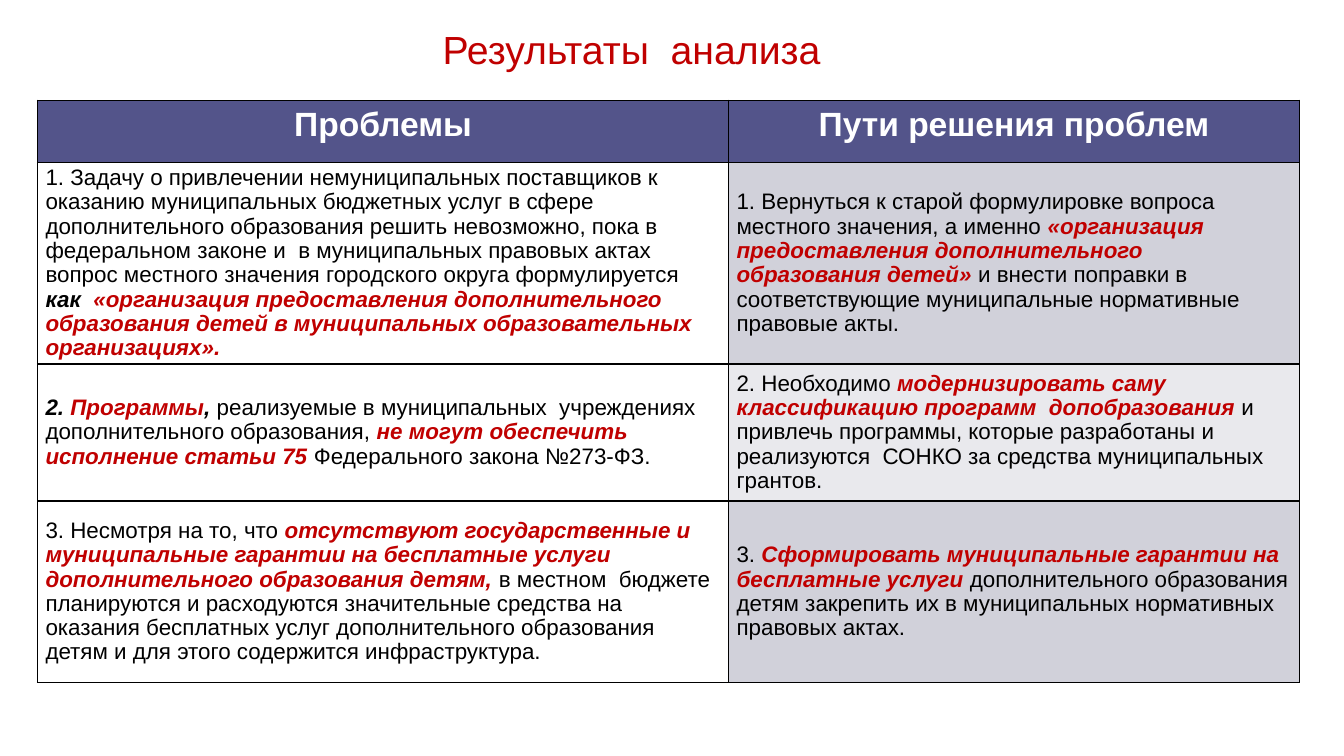
import dataclasses

import lxml.etree
import pptx
import pptx.dml.color
import pptx.enum.text
import pptx.oxml.ns
import pptx.util

Cm = pptx.util.Cm
Pt = pptx.util.Pt
Align = pptx.enum.text.PP_ALIGN
Anchor = pptx.enum.text.MSO_ANCHOR


@dataclasses.dataclass(frozen=True)
class Theme:
    font: str = "Arial"
    title_size: int = 21
    header_size: int = 18
    body_size: int = 12
    line_spacing: int = 13
    border_width: int = 1
    text: str = "000000"
    accent: str = "C00000"
    header_text: str = "FFFFFF"
    header_fill: str = "53548A"
    dark_band: str = "D1D1DA"
    light_band: str = "E9E9ED"


THEME = Theme()

HEADERS = ("Проблемы", "Пути решения проблем")

PLAIN, STRONG, ACCENT = "plain", "strong", "accent"

FINDINGS = [
    (
        [
            (PLAIN, "1. Задачу о привлечении немуниципальных поставщиков к оказанию "
                    "муниципальных бюджетных услуг в сфере дополнительного образования "
                    "решить невозможно, пока в федеральном законе и  в муниципальных "
                    "правовых актах вопрос местного значения городского округа "
                    "формулируется "),
            (STRONG, "как  "),
            (ACCENT, "«организация предоставления дополнительного образования детей "
                     "в муниципальных образовательных организациях»."),
        ],
        [
            (PLAIN, "1. Вернуться к старой формулировке вопроса местного значения, "
                    "а именно "),
            (ACCENT, "«организация предоставления дополнительного образования детей»"),
            (PLAIN, " и внести поправки в соответствующие муниципальные нормативные "
                    "правовые акты."),
        ],
    ),
    (
        [
            (STRONG, "2. "),
            (ACCENT, "Программы"),
            (STRONG, ","),
            (PLAIN, " реализуемые в муниципальных  учреждениях дополнительного "
                    "образования, "),
            (ACCENT, "не могут обеспечить исполнение статьи 75 "),
            (PLAIN, "Федерального закона №273-ФЗ."),
        ],
        [
            (PLAIN, "2. Необходимо "),
            (ACCENT, "модернизировать саму классификацию программ  допобразования"),
            (PLAIN, " и  привлечь программы, которые разработаны и реализуются  СОНКО "
                    "за средства муниципальных грантов."),
        ],
    ),
    (
        [
            (PLAIN, "3. Несмотря на то, что "),
            (ACCENT, "отсутствуют государственные и муниципальные гарантии на "
                     "бесплатные услуги дополнительного образования детям, "),
            (PLAIN, "в местном  бюджете планируются и расходуются значительные средства "
                    "на оказания бесплатных услуг дополнительного образования детям "
                    "и для этого содержится инфраструктура."),
        ],
        [
            (PLAIN, "3. "),
            (ACCENT, "Сформировать муниципальные гарантии на бесплатные услуги "),
            (PLAIN, "дополнительного образования детям закрепить их в муниципальных "
                    "нормативных правовых актах."),
        ],
    ),
]

COLUMN_WIDTHS = (13.06, 10.79)
ROW_HEIGHTS = (1.17, 3.81, 2.59, 3.43)


def rgb(color):
    return pptx.dml.color.RGBColor.from_string(color)


def add_run(paragraph, text, size, color, bold=False, italic=False):
    run = paragraph.add_run()
    run.text = text
    run.font.name = THEME.font
    run.font.size = Pt(size)
    run.font.color.rgb = rgb(color)
    run.font.bold = bold
    run.font.italic = italic


def add_title(slide, text):
    shape = slide.shapes.add_textbox(Cm(7.01), Cm(0.38), Cm(10.06), Cm(1.09))
    frame = shape.text_frame
    frame.word_wrap = True
    frame.margin_left = frame.margin_right = Cm(0.18)
    frame.margin_top = frame.margin_bottom = Cm(0.1)
    paragraph = frame.paragraphs[0]
    paragraph.alignment = Align.CENTER
    add_run(paragraph, text, THEME.title_size, THEME.accent)


def add_borders(cell):
    properties = cell._tc.get_or_add_tcPr()
    qn = pptx.oxml.ns.qn
    for position, side in enumerate(("lnL", "lnR", "lnT", "lnB")):
        line = lxml.etree.Element(qn(f"a:{side}"), w=str(Pt(THEME.border_width)))
        fill = lxml.etree.SubElement(line, qn("a:solidFill"))
        lxml.etree.SubElement(fill, qn("a:srgbClr"), val=THEME.text)
        properties.insert(position, line)


def prepare_cell(cell, fill, alignment):
    cell.margin_left = cell.margin_right = Cm(0.15)
    cell.margin_top = cell.margin_bottom = 0
    cell.vertical_anchor = Anchor.MIDDLE
    if fill:
        cell.fill.solid()
        cell.fill.fore_color.rgb = rgb(fill)
    else:
        cell.fill.background()
    add_borders(cell)
    paragraph = cell.text_frame.paragraphs[0]
    paragraph.alignment = alignment
    paragraph.line_spacing = Pt(THEME.line_spacing)
    return paragraph


def fill_header_cell(cell, text):
    paragraph = prepare_cell(cell, THEME.header_fill, Align.CENTER)
    add_run(paragraph, text, THEME.header_size, THEME.header_text, bold=True)


def fill_body_cell(cell, pieces, fill):
    paragraph = prepare_cell(cell, fill, Align.LEFT)
    for style, text in pieces:
        color = THEME.accent if style == ACCENT else THEME.text
        emphasis = style != PLAIN
        add_run(paragraph, text, THEME.body_size, color, emphasis, emphasis)


def add_findings_table(slide):
    shape = slide.shapes.add_table(
        len(ROW_HEIGHTS), len(COLUMN_WIDTHS), Cm(0.71), Cm(1.9),
        Cm(sum(COLUMN_WIDTHS)), Cm(sum(ROW_HEIGHTS)))
    table = shape.table
    table.first_row = table.horz_banding = False
    for column, width in zip(table.columns, COLUMN_WIDTHS):
        column.width = Cm(width)
    for row, height in zip(table.rows, ROW_HEIGHTS):
        row.height = Cm(height)
    for index, header in enumerate(HEADERS):
        fill_header_cell(table.cell(0, index), header)
    for index, (problem, solution) in enumerate(FINDINGS, start=1):
        band = THEME.dark_band if index % 2 else THEME.light_band
        fill_body_cell(table.cell(index, 0), problem, None)
        fill_body_cell(table.cell(index, 1), solution, band)


def main():
    presentation = pptx.Presentation()
    presentation.slide_width = Cm(25.4)
    presentation.slide_height = Cm(14.29)
    slide = presentation.slides.add_slide(presentation.slide_layouts[6])
    add_findings_table(slide)
    add_title(slide, "Результаты  анализа ")
    presentation.save("out.pptx")


if __name__ == "__main__":
    main()
